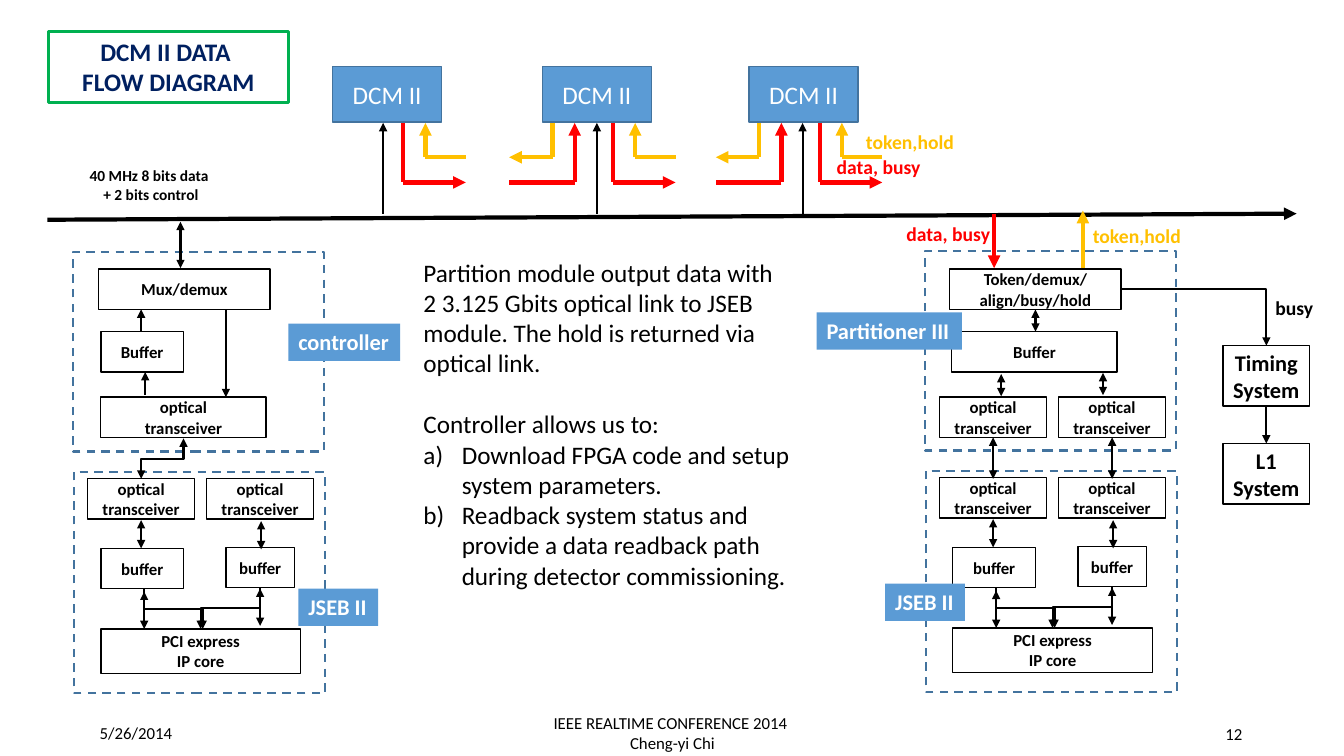
from dataclasses import dataclass
from lxml import etree
from pptx import Presentation
from pptx.dml.color import RGBColor
from pptx.enum.dml import MSO_LINE
from pptx.enum.shapes import MSO_CONNECTOR, MSO_SHAPE
from pptx.enum.text import MSO_ANCHOR, MSO_AUTO_SIZE, PP_ALIGN
from pptx.oxml.ns import qn
from pptx.util import Inches, Pt

RECT = MSO_SHAPE.RECTANGLE
STRAIGHT, ELBOW = MSO_CONNECTOR.STRAIGHT, MSO_CONNECTOR.ELBOW
LEFT, CENTER, RIGHT = PP_ALIGN.LEFT, PP_ALIGN.CENTER, PP_ALIGN.RIGHT
TOP, MIDDLE = MSO_ANCHOR.TOP, MSO_ANCHOR.MIDDLE
FIXED, DASH = MSO_AUTO_SIZE.NONE, MSO_LINE.DASH
BLACK, WHITE, NAVY, GREEN = "000000", "FFFFFF", "002060", "00B050"
RED, GOLD, BLUE, EDGE = "FF0000", "FFC000", "5B9BD5", "43739E"
OPTIC = "optical\ntransceiver"


@dataclass
class Box:
    x: float
    y: float
    w: float
    h: float
    text: str = ""
    size: int = 12


@dataclass
class Link:
    x1: float
    y1: float
    x2: float
    y2: float
    ends: str = ""  # "head", "tail" or both
    color: str = BLACK
    width: float = 1.5


@dataclass
class Style:
    size: float
    color: str = BLACK
    bold: bool = False
    align: PP_ALIGN = LEFT
    anchor: MSO_ANCHOR = TOP
    wrap: bool = True


def rgb(code: str) -> RGBColor:
    return RGBColor.from_string(code)


def place(shape, box: Box) -> None:
    shape.left, shape.top = Inches(box.x), Inches(box.y)
    shape.width, shape.height = Inches(box.w), Inches(box.h)


def write(frame, text: str, style: Style) -> None:
    """Fill a frame: newline parts paragraphs, vertical tab breaks a line."""
    frame.auto_size, frame.word_wrap = FIXED, style.wrap
    frame.vertical_anchor = style.anchor
    for i, line in enumerate(text.split("\n")):
        para = frame.paragraphs[0] if i == 0 else frame.add_paragraph()
        para.alignment, para.space_before = style.align, Pt(0)
        for j, part in enumerate(line.split("\v")):
            if j:
                para.add_line_break()
            run = para.add_run()
            run.text = part
            font = run.font
            font.name, font.size, font.bold = "Calibri", Pt(style.size), style.bold
            font.color.rgb = rgb(style.color)


def label(box: Box, style: Style, fill: str = "") -> None:
    shape = shapes.add_textbox(0, 0, 0, 0)
    place(shape, box)
    if fill:
        shape.fill.solid()
        shape.fill.fore_color.rgb = rgb(fill)
    write(shape.text_frame, box.text, style)


def rect(box: Box, fill: str = WHITE, edge: str = BLACK, width: float = 1,
         style: Style | None = None):
    shape = shapes.add_shape(RECT, 0, 0, 0, 0)
    place(shape, box)
    shape.shadow.inherit = False
    if fill:
        shape.fill.solid()
        shape.fill.fore_color.rgb = rgb(fill)
    else:
        shape.fill.background()
    shape.line.color.rgb, shape.line.width = rgb(edge), Pt(width)
    if box.text:
        frame = shape.text_frame
        frame.margin_left = frame.margin_right = Inches(0.05)
        write(frame, box.text, style or Style(box.size, BLACK, True, CENTER, MIDDLE))
    return shape


def frame_off(box: Box) -> None:
    """Draw the dashed border of a module."""
    rect(box, "", EDGE, 1.5).line.dash_style = DASH


def join(link: Link, kind: MSO_CONNECTOR = STRAIGHT):
    line = shapes.add_connector(kind, Inches(link.x1), Inches(link.y1),
                                Inches(link.x2), Inches(link.y2))
    line.line.color.rgb, line.line.width = rgb(link.color), Pt(link.width)
    props = line._element.spPr
    for end in ("head", "tail"):
        if end in link.ends:
            etree.SubElement(props.find(qn("a:ln")), qn(f"a:{end}End"), type="triangle")
    etree.SubElement(props, qn("a:effectLst"))
    return props


def drop(x1: float, y1: float, x2: float, y2: float, ends: str = "tail") -> None:
    """Join two points by an elbow that leaves downwards."""
    mx, my = (x1 + x2) / 2, (y1 + y2) / 2
    dx, dy = (x1 - x2) / 2, (y2 - y1) / 2
    props = join(Link(mx - dy, my - dx, mx + dy, my + dx, ends), ELBOW)
    props.find(qn("a:xfrm")).set("rot", "5400000")


def dcm(x: float, tap: float, inner: bool) -> None:
    """Draw a DCM with its bus tap; inner ones also link to the left."""
    base, gold, red = 1.22, 1.56, 1.81
    rect(Box(x, 0.66, 1.08, 0.55, "DCM II"), BLUE, EDGE, 1,
         Style(18, WHITE, False, CENTER, MIDDLE))
    links = [(0.92, gold, 0.92, base, "tail", GOLD), (0.92, gold, 1.32, gold, "", GOLD),
             (0.7, base, 0.7, red, "", RED), (0.7, red, 1.32, red, "tail", RED)]
    if inner:
        links += [(0.1, base, 0.1, gold, "", GOLD), (0.1, gold, -0.33, gold, "tail", GOLD),
                  (0.32, red, 0.32, base, "tail", RED), (0.32, red, -0.33, red, "", RED)]
    for x1, y1, x2, y2, ends, color in links:
        join(Link(x + x1, y1, x + x2, y2, ends, color, 3))
    join(Link(tap, 2.12, tap, base, "tail"))


def jseb(x: float, y: float) -> None:
    frame_off(Box(x, y, 2.49, 2.2))
    for dx, dy, w, h, text in [
            (0.14, 0.07, 1.06, 0.4, OPTIC), (1.32, 0.07, 1.06, 0.4, OPTIC),
            (0.27, 0.76, 0.82, 0.4, "buffer"), (1.51, 0.75, 0.68, 0.4, "buffer"),
            (0.27, 1.56, 1.98, 0.44, "PCI express\nIP core")]:
        rect(Box(x + dx, y + dy, w, h, text))
    for dx, top, end in [(0.67, 0.48, 0.76), (1.86, 0.49, 0.77),
                         (0.7, 1.19, 1.56), (1.85, 1.16, 1.53)]:
        join(Link(x + dx, y + top, x + dx, y + end, "head tail"))
    drop(x + 0.7, y + 1.16, x + 1.28, y + 1.56)
    drop(x + 1.85, y + 1.15, x + 1.26, y + 1.56)


def fill_body(body) -> None:
    place(body, Box(4.1, 2.5, 3.86, 3.74))
    write(body.text_frame,
          "Partition module output data with\v2 3.125 Gbits optical link to JSEB module. "
          "The hold is returned via optical link.\n"
          "Controller allows us to:\n"
          "Download FPGA code and setup system parameters.\n"
          "Readback system status and provide a data readback path "
          "during detector commissioning.", Style(18))
    paras = body.text_frame.paragraphs
    paras[1].space_before = Pt(22)
    for i, para in enumerate(paras):
        props = para._p.get_or_add_pPr()
        hang = Inches(0.38) if i > 1 else 0
        props.set("marL", str(hang))
        props.set("indent", str(-hang))
        if hang:
            etree.SubElement(props, qn("a:buFont"), typeface="+mj-lt")
            etree.SubElement(props, qn("a:buAutoNum"), type="alphaLcParenR")
        else:
            etree.SubElement(props, qn("a:buNone"))


deck = Presentation()
deck.slide_width, deck.slide_height = Inches(13.33), Inches(7.5)
slide = deck.slides.add_slide(deck.slide_layouts[1])
shapes = slide.shapes

title = shapes.title
place(title, Box(0.48, 0.31, 2.38, 0.71))
title.line.color.rgb, title.line.width = rgb(GREEN), Pt(2)
write(title.text_frame, "DCM II DATA \nFLOW DIAGRAM", Style(18, NAVY, True, CENTER))
fill_body(slide.placeholders[1])

join(Link(0.47, 2.18, 12.86, 2.12, "tail", BLACK, 3))
for x, tap in [(3.3, 3.8), (5.38, 5.92), (7.43, 7.96)]:
    dcm(x, tap, x > 4)

frame_off(Box(0.72, 2.5, 2.49, 1.98))
frame_off(Box(9.17, 2.49, 2.49, 1.98))
for box in [Box(0.98, 2.67, 1.7, 0.4, "Mux/demux"), Box(1, 3.29, 0.82, 0.4, "Buffer"),
            Box(1, 3.94, 1.64, 0.4, OPTIC),
            Box(9.42, 2.67, 1.7, 0.4, "Token/demux/\valign/busy/hold"),
            Box(9.44, 3.29, 1.64, 0.4, "Buffer"),
            Box(9.32, 3.94, 1.06, 0.4, OPTIC), Box(10.5, 3.94, 1.06, 0.4, OPTIC),
            Box(12.13, 3.43, 0.86, 0.6, "Timing\nSystem", 16),
            Box(12.13, 4.4, 0.86, 0.6, "L1 System", 16)]:
    rect(box)
jseb(0.73, 4.68)
jseb(9.18, 4.67)

for x, top, end, ends in [
        (1.79, 2.2, 2.66, "head tail"), (1.4, 3.07, 3.29, "head"),
        (1.44, 3.69, 3.92, "head"), (2.24, 3.07, 3.94, "tail"),
        (10.27, 3.07, 3.29, "head tail"), (9.93, 3.71, 3.93, "head tail"),
        (10.94, 3.7, 3.92, "head tail"), (9.85, 4.34, 4.75, "head tail"),
        (11.03, 4.34, 4.75, "head tail"), (12.56, 4.03, 4.4, "tail")]:
    join(Link(x, top, x, end, ends))
join(Link(9.86, 2.12, 9.86, 2.66, "tail", RED, 3))
join(Link(10.74, 2.66, 10.74, 2.09, "tail", GOLD, 3))
drop(1.82, 4.35, 1.4, 4.75, "head tail")
timing = join(Link(11.12, 2.87, 12.56, 3.43, "tail"), ELBOW)
timing.find(qn("a:prstGeom")).set("prst", "bentConnector2")

for x, y, w, text, color in [
        (8.49, 1.24, 1.08, "token,hold", GOLD), (8.2, 1.49, 1.08, "data, busy", RED),
        (8.89, 2.15, 1.08, "data, busy", RED), (10.74, 2.17, 1.08, "token,hold", GOLD),
        (12.55, 2.89, 0.58, "busy", BLACK)]:
    label(Box(x, y, w, 0.34, text), Style(14, color, True, wrap=False))
for x, y, w, text in [(2.86, 3.21, 1.11, "controller"), (2.96, 5.84, 0.79, "JSEB II"),
                      (8.78, 5.79, 0.79, "JSEB II"), (8.1, 3.1, 1.44, "Partitioner III")]:
    label(Box(x, y, w, 0.37, text), Style(16, WHITE, True, wrap=False), BLUE)
label(Box(0.78, 1.6, 1.4, 0.47, "40 MHz 8 bits data\n + 2 bits control"),
      Style(11, BLACK, True, CENTER, wrap=False))
for x, y, w, text, align in [
        (0.89, 7.07, 3, "5/26/2014", LEFT),
        (4.42, 7.07, 4.5, "IEEE REALTIME CONFERENCE 2014 \nCheng-yi Chi", CENTER),
        (9.42, 7.08, 3, "12", RIGHT)]:
    label(Box(x, y, w, 0.4, text), Style(12, BLACK, False, align, MIDDLE))

deck.save("out.pptx")
